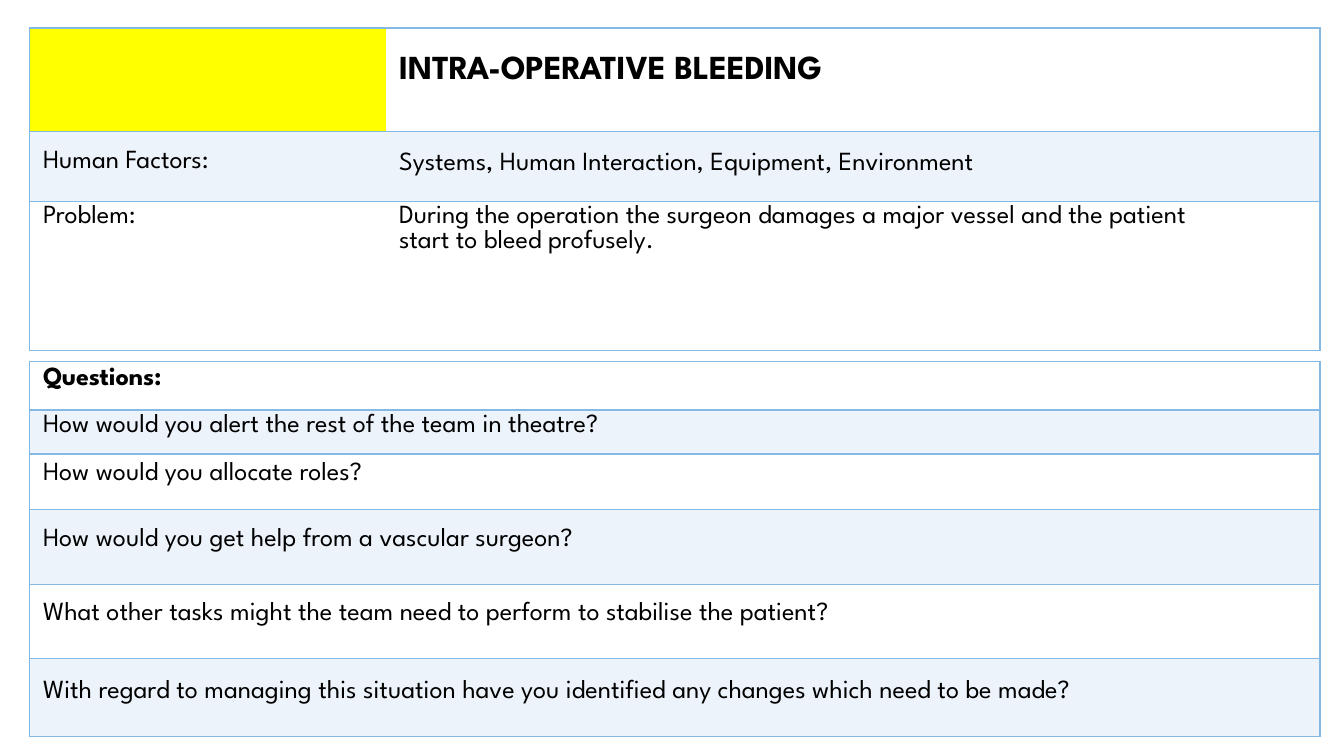
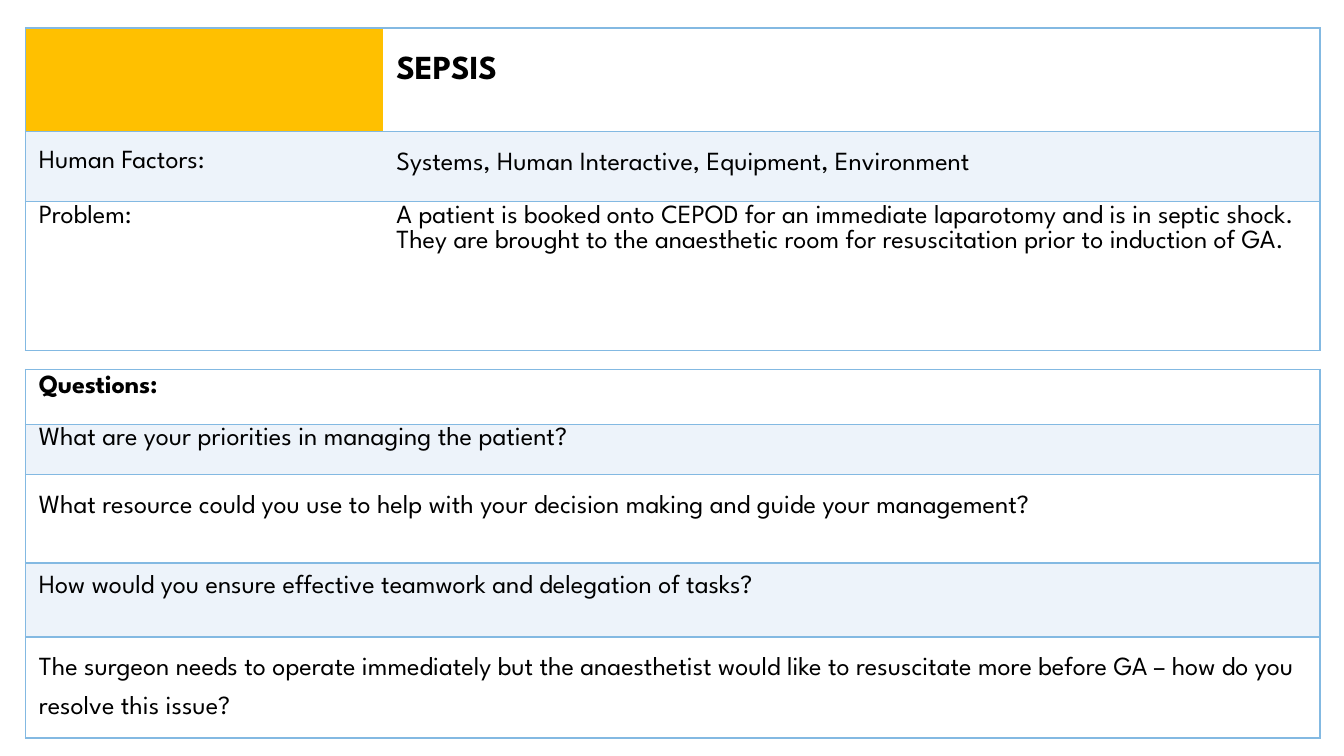
"""Builds two theatre scenario cards, each a header table above a question table."""
from lxml import etree
from pptx import Presentation
from pptx.dml.color import RGBColor as Color
from pptx.oxml.ns import qn
from pptx.util import Pt

PX = 9144
FONT = "League Spartan"
BLACK = Color(0x00, 0x00, 0x00)
WHITE = Color(0xFF, 0xFF, 0xFF)
BAND = Color(0xED, 0xF3, 0xFA)
LINE = Color(0x83, 0xB9, 0xE2)
YELLOW = Color(0xFF, 0xFF, 0x00)
AMBER = Color(0xFF, 0xC0, 0x00)
EDGES = ("L", "R", "T", "B")
HEADER_ROWS = (77, 52, 111)


def add_grid(page, left, top, columns, rows):
    """Add a plain table with the given column widths and row heights."""
    frame = page.shapes.add_table(len(rows), len(columns), left * PX, top * PX,
                                  sum(columns) * PX, sum(rows) * PX)
    grid = frame.table
    grid.first_row = grid.horz_banding = False
    for column, width in zip(grid.columns, columns):
        column.width = width * PX
    for row, height in zip(grid.rows, rows):
        row.height = height * PX
    return grid


def fill_cell(cell, text, inset, fill, edges, size=14, bold=False, exact=False, right=0):
    """Set the borders, fill, insets and text of one cell."""
    properties = cell._tc.get_or_add_tcPr()
    for edge in EDGES:
        border = etree.SubElement(properties, qn("a:ln" + edge), w=str(Pt(1)))
        if edge in edges:
            paint = etree.SubElement(border, qn("a:solidFill"))
            etree.SubElement(paint, qn("a:srgbClr"), val=str(LINE))
        else:
            etree.SubElement(border, qn("a:noFill"))
    cell.fill.solid()
    cell.fill.fore_color.rgb = fill
    cell.margin_left, cell.margin_right = 10 * PX, right * PX
    cell.margin_top, cell.margin_bottom = inset * PX, 0
    if not text:
        return
    cell.text_frame.text = text
    para = cell.text_frame.paragraphs[0]
    if exact:
        para.line_spacing = Pt(21)
    span = para.runs[0]
    span.font.name, span.font.size, span.font.bold = FONT, Pt(size), bold
    span.font.color.rgb = BLACK
    if bold:
        span._r.get_or_add_rPr().set("spc", "-10")


CARDS = [
    {
        "title": "INTRA-OPERATIVE BLEEDING",
        "accent": YELLOW,
        "left": 22,
        "columns": (265, 695),
        "factors": "Systems, Human Interaction, Equipment, Environment",
        "problem": "During the operation the surgeon damages a major vessel "
                   "and the patient start to bleed profusely.",
        "problem_right": 75,
        "questions_top": 269,
        "questions": [
            ("Questions:", 36, 4, False),
            ("How would you alert the rest of the team in theatre?", 33, 3, False),
            ("How would you allocate roles?", 41, 6, False),
            ("How would you get help from a vascular surgeon?", 56, 14, False),
            ("What other tasks might the team need to perform to stabilise "
             "the patient?", 55, 13, False),
            ("With regard to managing this situation have you identified any "
             "changes which need to be made?", 58, 5, True),
        ],
    },
    {
        "title": "SEPSIS",
        "accent": AMBER,
        "left": 19,
        "columns": (266, 697),
        "factors": "Systems, Human Interactive, Equipment, Environment",
        "problem": "A patient is booked onto CEPOD for an immediate laparotomy and is "
                   "in septic shock. They are brought to the anaesthetic room for "
                   "resuscitation prior to induction of GA.",
        "problem_right": 0,
        "questions_top": 275,
        "questions": [
            ("Questions:", 41, 4, False),
            ("What are your priorities in managing the patient?", 37, 2, False),
            ("What resource could you use to help with your decision making and "
             "guide your management?", 66, 4, True),
            ("How would you ensure effective teamwork and delegation of tasks?",
             55, 9, False),
            ("The surgeon needs to operate immediately but the anaesthetist would "
             "like to resuscitate more before GA – how do you resolve this issue?",
             75, 4, True),
        ],
    },
]

deck = Presentation()
deck.slide_width = 1000 * PX
deck.slide_height = deck.slide_width * 9 // 16

for card in CARDS:
    page = deck.slides.add_slide(deck.slide_layouts[6])

    header = add_grid(page, card["left"], 21, card["columns"], HEADER_ROWS)
    fill_cell(header.cell(0, 0), "", 0, card["accent"], "LTB")
    fill_cell(header.cell(0, 1), card["title"], 21, WHITE, "RTB", size=18, bold=True)
    fill_cell(header.cell(1, 0), "Human Factors:", 14, BAND, "LTB")
    fill_cell(header.cell(1, 1), card["factors"], 4, BAND, "RTB", exact=True)
    fill_cell(header.cell(2, 0), "Problem:", 3, WHITE, "LTB")
    fill_cell(header.cell(2, 1), card["problem"], 3, WHITE, "RTB",
              right=card["problem_right"])

    heights = [height for _, height, _, _ in card["questions"]]
    questions = add_grid(page, card["left"], card["questions_top"],
                         [sum(card["columns"])], heights)
    for index, (text, _, inset, exact) in enumerate(card["questions"]):
        fill_cell(questions.cell(index, 0), text, inset, BAND if index % 2 else WHITE,
                  "LRTB", bold=index == 0, exact=exact)

deck.save("out.pptx")
